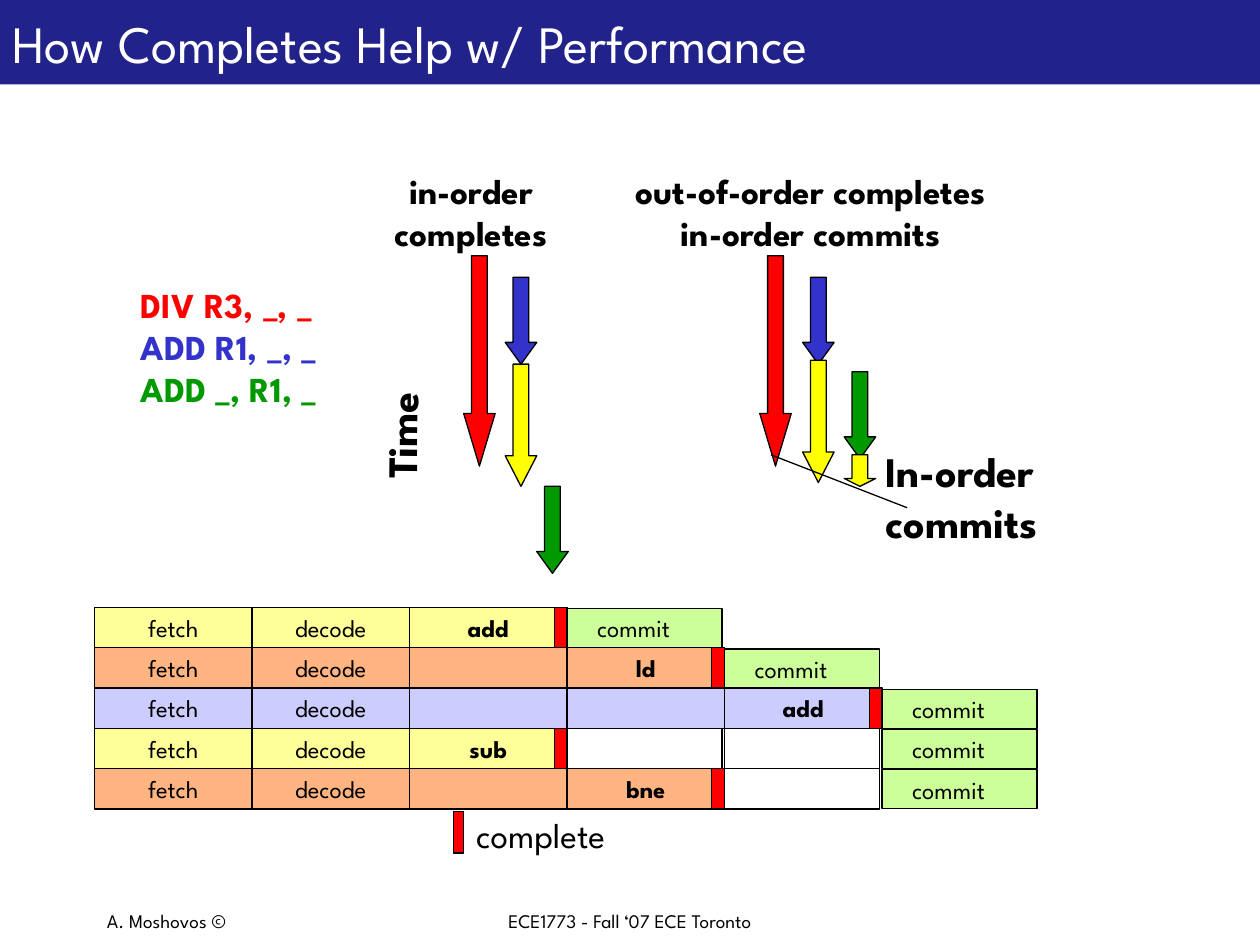
from lxml import etree
from pptx import Presentation
from pptx.dml.color import RGBColor
from pptx.enum.shapes import MSO_CONNECTOR, MSO_SHAPE
from pptx.enum.text import MSO_ANCHOR, MSO_AUTO_SIZE, PP_ALIGN
from pptx.oxml.ns import qn
from pptx.util import Inches, Pt

RECT, DOWN_ARROW = MSO_SHAPE.RECTANGLE, MSO_SHAPE.DOWN_ARROW
STRAIGHT = MSO_CONNECTOR.STRAIGHT
LEFT, CENTER = PP_ALIGN.LEFT, PP_ALIGN.CENTER
MIDDLE = MSO_ANCHOR.MIDDLE
FIT = MSO_AUTO_SIZE.SHAPE_TO_FIT_TEXT

FONT = "League Spartan"
COLORS = {
    "black": "000000", "white": "FFFFFF", "navy": "22228B",
    "red": "FF0000", "blue": "3333CC", "yellow": "FFFF00", "green": "009900",
    "cream": "FFFF99", "orange": "FFB481", "lilac": "CCCCFF", "lime": "CCFF99",
}

GRID_LEFT, GRID_TOP = 0.75, 4.82
CELL_W, CELL_H = 1.25, 0.32
BOX_W, MARK_W = 1.23, 0.1

PIPELINE = [
    ("cream", ["fetch", "decode", "add"], 3),
    ("orange", ["fetch", "decode", "", "ld"], 4),
    ("lilac", ["fetch", "decode", "", "", "add"], 5),
    ("cream", ["fetch", "decode", "sub"], 5),
    ("orange", ["fetch", "decode", "", "bne"], 5),
]

ARROWS = [
    (3.68, 2.03, 1.67, "red"),
    (4.01, 2.2, 0.69, "blue"),
    (4.01, 2.89, 0.97, "yellow"),
    (4.26, 3.86, 0.69, "green"),
    (6.03, 2.03, 1.67, "red"),
    (6.37, 2.2, 0.69, "blue"),
    (6.37, 2.86, 0.97, "yellow"),
    (6.7, 2.95, 0.69, "green"),
    (6.7, 3.61, 0.25, "yellow"),
]


def rgb(name):
    return RGBColor.from_string(COLORS[name])


def write(tf, lines, size, bold=False, align=LEFT):
    for i, (text, color) in enumerate(lines):
        p = tf.paragraphs[0] if i == 0 else tf.add_paragraph()
        p.alignment = align
        r = p.add_run()
        r.text = text
        r.font.name = FONT
        r.font.size = Pt(size)
        r.font.bold = bold
        r.font.color.rgb = rgb(color)


def add_text(s, x, y, w, h, lines, size, bold=False, align=LEFT, wrap=False):
    sp = s.shapes.add_textbox(Inches(x), Inches(y), Inches(w), Inches(h))
    tf = sp.text_frame
    tf.word_wrap = wrap
    if not wrap:
        tf.auto_size = FIT
    write(tf, lines, size, bold, align)
    return sp


def add_block(s, x, y, w, h, fill=None, kind=RECT, outlined=True):
    sp = s.shapes.add_shape(kind, Inches(x), Inches(y), Inches(w), Inches(h))
    sp.shadow.inherit = False
    if fill:
        sp.fill.solid()
        sp.fill.fore_color.rgb = rgb(fill)
    else:
        sp.fill.background()
    if outlined:
        sp.line.color.rgb = rgb("black")
        sp.line.width = Pt(0.75)
    else:
        sp.line.fill.background()
    return sp


def add_title(s, text):
    sp = add_block(s, 0, 0, 10, 0.67, "navy", outlined=False)
    sp.text_frame.vertical_anchor = MIDDLE
    write(sp.text_frame, [(text, "white")], 30)


def add_arrow(s, x, y, h, color):
    sp = add_block(s, x, y, 0.25, h, color, DOWN_ARROW)
    sp.adjustments[0] = 0.5
    sp.adjustments[1] = h


def add_cell(s, x, y, fill, text, bold):
    sp = add_block(s, x, y, CELL_W, CELL_H, fill)
    if text:
        tf = sp.text_frame
        tf.word_wrap = False
        tf.vertical_anchor = MIDDLE
        write(tf, [(text, "black")], 14, bold, CENTER)


def add_line(s, x1, y1, x2, y2):
    line = s.shapes.add_connector(STRAIGHT, Inches(x1), Inches(y1), Inches(x2), Inches(y2))
    line.line.color.rgb = rgb("black")
    line.line.width = Pt(0.75)
    etree.SubElement(line._element.spPr, qn("a:effectLst"))


def add_pipeline_row(s, row, fill, stages, commit_col):
    y = GRID_TOP + row * CELL_H
    for col, stage in enumerate(stages):
        add_cell(s, GRID_LEFT + col * CELL_W, y, fill, stage, col > 1)
    done = len(stages)
    for col in range(done, commit_col):
        add_block(s, GRID_LEFT + col * CELL_W, y, BOX_W, CELL_H)
    x = GRID_LEFT + commit_col * CELL_W
    add_block(s, x, y + 0.01, BOX_W, CELL_H - 0.01, "lime")
    add_block(s, GRID_LEFT + done * CELL_W - MARK_W, y, MARK_W, CELL_H, "red")
    add_text(s, x + 0.14, y, 0.92, 0.33, [("commit", "black")], 14)


def main():
    prs = Presentation()
    prs.slide_width, prs.slide_height = Inches(10), Inches(7.5)
    s = prs.slides.add_slide(prs.slide_layouts[6])

    add_text(s, 0.75, 7.17, 2.08, 0.42, [("A. Moshovos ©", "black")], 11, wrap=True)
    add_text(s, 3.25, 7.17, 3.5, 0.42, [("ECE1773 - Fall ‘07 ECE Toronto", "black")],
             11, align=CENTER, wrap=True)
    add_title(s, "How Completes Help w/ Performance")

    for arrow in ARROWS:
        add_arrow(s, *arrow)
    time = add_text(s, 2.71, 3.17, 0.95, 0.5, [("Time", "black")], 24, True)
    time.rotation = 270.6

    add_text(s, 1.02, 2.2, 1.78, 1.1,
             [("DIV R3, _, _", "red"), ("ADD R1, _, _", "blue"), ("ADD _, R1, _", "green")],
             20, True)
    add_line(s, 6.12, 3.61, 7.2, 4.03)
    add_text(s, 6.93, 3.49, 1.58, 0.9, [("In-order", "black"), ("commits", "black")], 24, True)
    add_text(s, 2.93, 1.3, 1.62, 0.77, [("in-order", "black"), ("completes", "black")],
             20, True, CENTER)
    add_text(s, 4.77, 1.3, 3.33, 0.77,
             [("out-of-order completes", "black"), ("in-order commits", "black")],
             20, True, CENTER)

    add_block(s, 3.6, 6.44, 0.08, 0.33, "red")
    add_text(s, 3.68, 6.41, 1.52, 0.43, [("complete", "black")], 20)
    for row, (fill, stages, commit_col) in enumerate(PIPELINE):
        add_pipeline_row(s, row, fill, stages, commit_col)

    prs.save("out.pptx")


if __name__ == "__main__":
    main()
